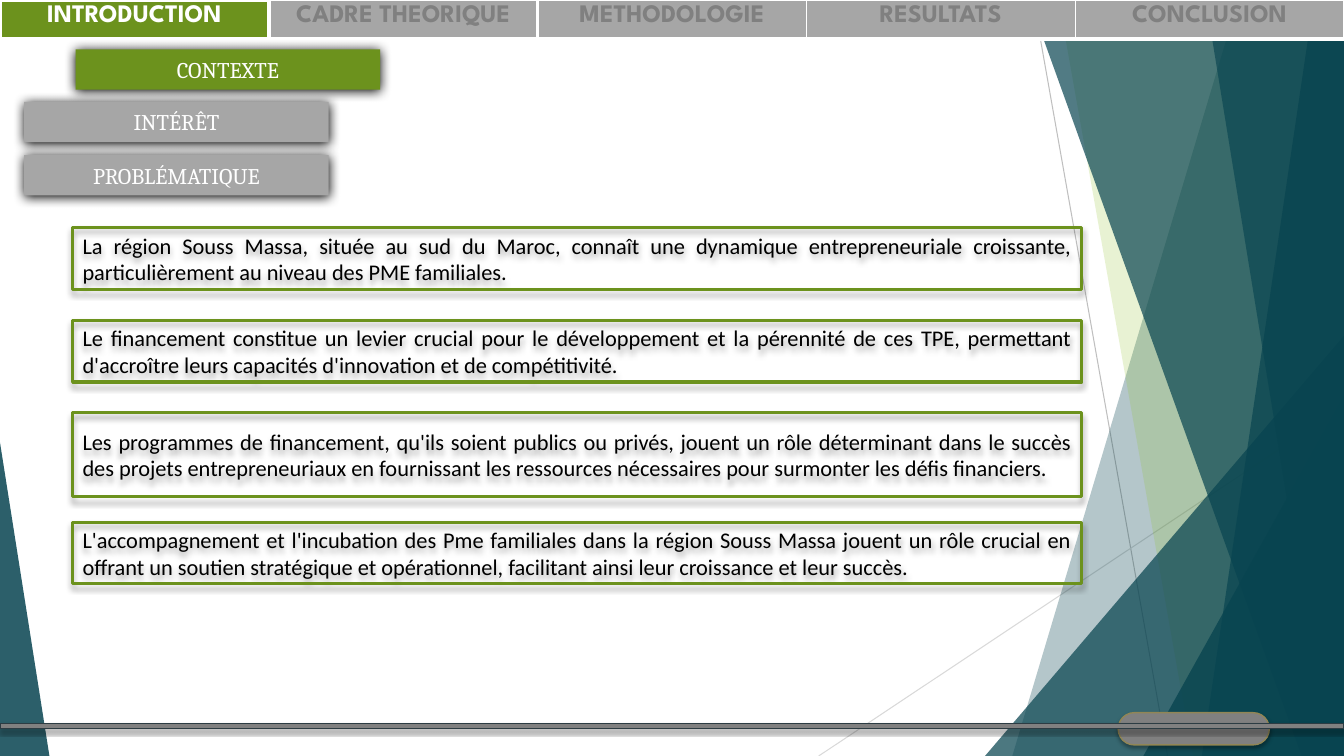
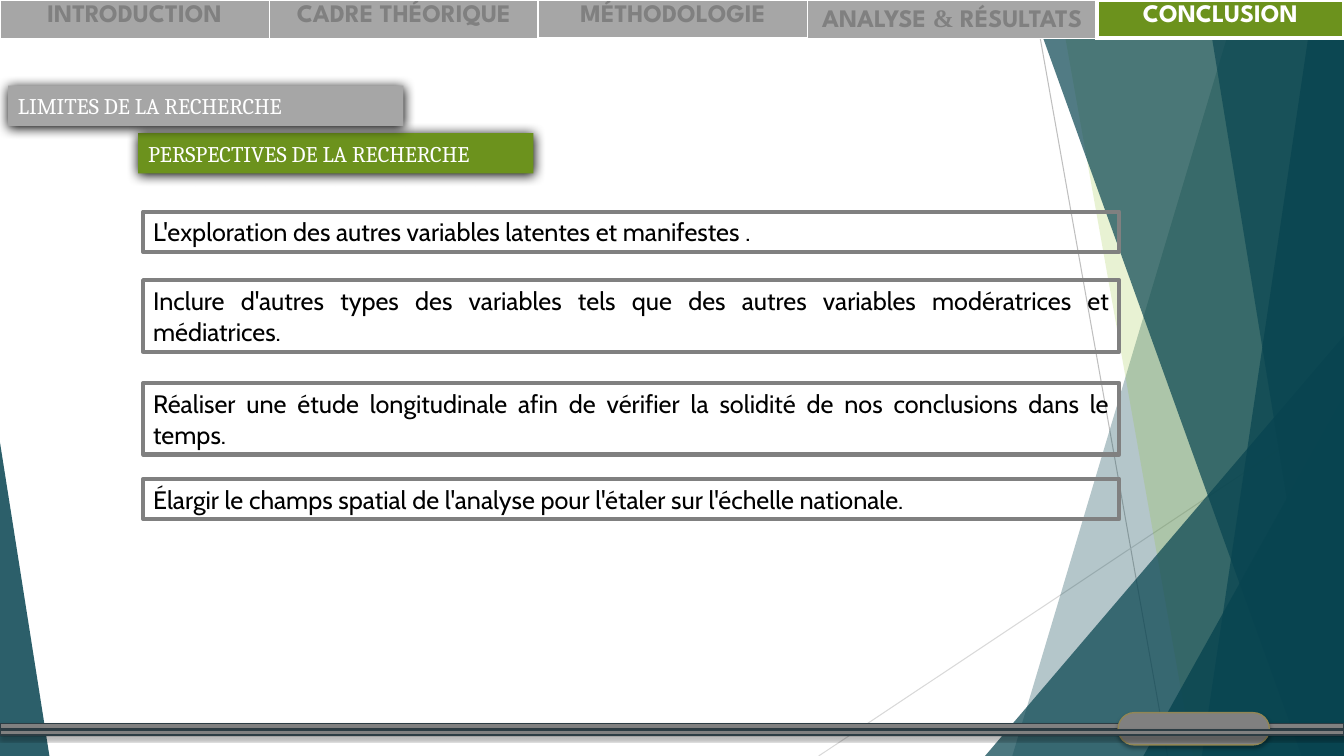
from lxml.etree import SubElement
from pptx import Presentation
from pptx.dml.color import RGBColor
from pptx.enum.shapes import MSO_CONNECTOR, MSO_SHAPE as SHAPE
from pptx.enum.text import MSO_ANCHOR as ANCHOR, PP_ALIGN as ALIGN
from pptx.oxml.ns import qn
from pptx.util import Inches, Pt

W, H = 13.33, 7.5
COLORS = {
    "green": "6C921D", "lime": "90C226", "teal": "084450", "silver": "A6A6A6",
    "gray": "808080", "slate": "2C3C43", "khaki": "918655", "white": "FFFFFF",
    "black": "000000", "hair": "BFBFBF", "pale": "D9D9D9",
}
CHIP_SHADOW = (100, 8.5, 1)
BAR_SHADOW = (35, 3, 2)
BOX_SHADOW = (35, 4, 3)


class Deck:
    """Hold the deck style and the slide being drawn."""

    def __init__(self):
        self.prs = Presentation()
        self.prs.slide_width, self.prs.slide_height = Inches(W), Inches(H)

    def rgb(self, name):
        return RGBColor.from_string(COLORS[name])

    def new_slide(self):
        self.s = self.prs.slides.add_slide(self.prs.slide_layouts[6])
        self.backdrop()

    def paint(self, sp, fill=None, alpha=100, line=None, width=1, shadow=None):
        if fill:
            sp.fill.solid()
            sp.fill.fore_color.rgb = self.rgb(fill)
            if alpha < 100:
                color = sp._element.spPr.find(qn("a:solidFill"))[0]
                SubElement(color, qn("a:alpha"), val=str(alpha * 1000))
        else:
            sp.fill.background()
        if line:
            sp.line.color.rgb = self.rgb(line)
            sp.line.width = Pt(width)
        else:
            sp.line.fill.background()
        sp.shadow.inherit = False
        if shadow:
            opacity, blur, dist = shadow
            effects = sp._element.spPr.find(qn("a:effectLst"))
            outer = SubElement(effects, qn("a:outerShdw"), blurRad=str(Pt(blur)),
                               dist=str(Pt(dist)), dir="5400000", rotWithShape="0")
            color = SubElement(outer, qn("a:srgbClr"), val=COLORS["black"])
            SubElement(color, qn("a:alpha"), val=str(opacity * 1000))

    def shape(self, kind, x, y, w, h, adj=None, **style):
        sp = self.s.shapes.add_shape(kind, Inches(x), Inches(y), Inches(w), Inches(h))
        if adj is not None:
            sp.adjustments[0] = adj
        self.paint(sp, **style)
        return sp

    def triangle(self, x, y, w, adj, alpha):
        self.shape(SHAPE.ISOSCELES_TRIANGLE, x, y, w, H - y, adj, fill="teal", alpha=alpha)

    def wedge(self, top, bottom, alpha, fill="teal"):
        fb = self.s.shapes.build_freeform(Inches(top), 0)
        corners = [(W, 0), (W, H), (bottom, H)]
        fb.add_line_segments([(Inches(x), Inches(y)) for x, y in corners])
        self.paint(fb.convert_to_shape(), fill=fill, alpha=alpha)

    def line(self, x1, y1, x2, y2, color):
        cn = self.s.shapes.add_connector(
            MSO_CONNECTOR.STRAIGHT, Inches(x1), Inches(y1), Inches(x2), Inches(y2))
        cn.line.color.rgb = self.rgb(color)
        cn.line.width = Pt(0.75)
        SubElement(cn._element.spPr, qn("a:effectLst"))

    def backdrop(self):
        self.line(10.25, 0, 11.58, H, "hair")
        self.line(W, 4.03, 8.12, H, "pale")
        self.wedge(12.28, 10.04, 30)
        self.wedge(10.5, 11.83, 20, "lime")
        self.triangle(9.77, 3.33, 3.56, 1, 72)
        self.wedge(10.21, 12.91, 70)
        self.wedge(13.03, 11.92, 70)
        self.wedge(11.96, 13.18, 65)
        self.triangle(11.34, 3.93, 1.99, 1, 80)
        self.triangle(0, 4.39, 0.49, 0, 85)

    def add_text(self, p, text, font, size, color, bold=False):
        r = p.add_run()
        r.text = text
        r.font.name, r.font.size, r.font.bold = font, Pt(size), bold
        r.font.color.rgb = self.rgb(color)

    def label(self, sp, text, font, size, color, align):
        tf = sp.text_frame
        tf.word_wrap = True
        tf.vertical_anchor = ANCHOR.MIDDLE
        p = tf.paragraphs[0]
        p.alignment = align
        self.add_text(p, text, font, size, color)

    def nav(self, labels, active, widths, height, borders):
        frame = self.s.shapes.add_table(
            1, len(labels), 0, 0, Inches(W), Inches(height))
        table = frame.table
        table.rows[0].height = Inches(height)
        for i, (runs, width, edges) in enumerate(zip(labels, widths, borders)):
            table.columns[i].width = Inches(width)
            cell = table.cell(0, i)
            tc_pr = cell._tc.get_or_add_tcPr()
            for side, weight in zip("LRTB", edges):
                ln = SubElement(tc_pr, qn(f"a:ln{side}"), w=str(Pt(weight)))
                solid = SubElement(ln, qn("a:solidFill"))
                SubElement(solid, qn("a:srgbClr"), val=COLORS["white"])
            cell.fill.solid()
            cell.fill.fore_color.rgb = self.rgb("green" if i == active else "silver")
            p = cell.text_frame.paragraphs[0]
            p.alignment = ALIGN.CENTER
            for text in runs:
                font = "Times New Roman" if text == "& " else "League Spartan"
                self.add_text(p, text, font, 18, "white" if i == active else "gray", True)

    def chip(self, text, x, y, w, active=False, align=ALIGN.CENTER):
        sp = self.shape(SHAPE.RECTANGLE, x, y, w, 0.4,
                        fill="green" if active else "silver", shadow=CHIP_SHADOW)
        self.label(sp, text, "Cambria", 16, "white", align)

    def box(self, text, x, y, w, h, font, size, **style):
        sp = self.shape(SHAPE.RECTANGLE, x, y, w, h, **style)
        self.label(sp, text, font, size, "black", ALIGN.JUSTIFY)

    def bar(self, y):
        self.shape(SHAPE.RECTANGLE, 0, y, W, 0.05, fill="gray", line="slate",
                   shadow=BAR_SHADOW)

    def pill(self):
        self.shape(SHAPE.ROUNDED_RECTANGLE, 11.09, 7.07, 1.5, 0.32, 0.5,
                   fill="gray", line="khaki", shadow=BAR_SHADOW)


def context_slide(deck):
    deck.new_slide()
    deck.nav([["INTRODUCTION"], ["CADRE THEORIQUE"], ["METHODOLOGIE"],
              ["RESULTATS"], ["CONCLUSION"]], 0, [W / 5] * 5, 0.39,
             [(3, 3, 3, 3), (3, 3, 1, 3), (3, 1, 1, 3), (1, 1, 1, 3), (1, 1, 1, 3)])
    deck.chip("CONTEXTE", 0.75, 0.49, 3.02, active=True)
    deck.chip("INTÉRÊT", 0.24, 1.01, 3.02)
    deck.chip("PROBLÉMATIQUE", 0.24, 1.54, 3.02)
    deck.pill()
    deck.bar(7.18)
    points = [
        (2.26, 0.61, "La région Souss Massa, située au sud du Maroc, connaît une dynamique "
         "entrepreneuriale croissante, particulièrement au niveau des PME familiales."),
        (3.18, 0.61, "Le financement constitue un levier crucial pour le développement et la "
         "pérennité de ces TPE, permettant d'accroître leurs capacités d'innovation et de "
         "compétitivité."),
        (4.09, 0.84, "Les programmes de financement, qu'ils soient publics ou privés, jouent "
         "un rôle déterminant dans le succès des projets entrepreneuriaux en fournissant les "
         "ressources nécessaires pour surmonter les défis financiers."),
        (5.18, 0.61, "L'accompagnement et l'incubation des Pme familiales dans la région Souss "
         "Massa jouent un rôle crucial en offrant un soutien stratégique et opérationnel, "
         "facilitant ainsi leur croissance et leur succès."),
    ]
    for y, h, text in points:
        deck.box(text, 0.72, y, 10.01, h, "Calibri", 16,
                 line="green", width=2.25, shadow=BOX_SHADOW)


def outlook_slide(deck):
    deck.new_slide()
    deck.nav([["INTRODUCTION"], ["CADRE THÉORIQUE"], ["MÉTHODOLOGIE"],
              ["ANALYSE ", "& ", "RÉSULTATS"], ["CONCLUSION"]], 4,
             [2.67, 2.67, 2.67, 2.87, 2.45], 0.38,
             [(1, 1, 1, 1), (1, 1.5, 1, 1), (1.5, 1, 1.5, 1.5), (1, 3, 1, 1), (3, 3, 3, 3)])
    deck.chip("PERSPECTIVES DE LA RECHERCHE", 1.37, 1.32, 3.92, True, ALIGN.LEFT)
    deck.chip("LIMITES DE LA RECHERCHE", 0.08, 0.85, 3.92, align=ALIGN.LEFT)
    points = [
        (2.1, 0.4, "L'exploration des autres variables latentes et manifestes ."),
        (2.78, 0.71, "Inclure d'autres types des variables tels que des autres variables "
         "modératrices et médiatrices."),
        (3.8, 0.71, "Réaliser une étude longitudinale afin de vérifier la solidité de nos "
         "conclusions dans le temps."),
        (4.75, 0.4, "Élargir le champs spatial de l'analyse pour l'étaler sur l'échelle "
         "nationale."),
    ]
    for y, h, text in points:
        deck.box(text, 1.42, y, 9.68, h, "Cabin", 18, line="gray", width=3)
    deck.bar(7.18)
    deck.pill()
    deck.bar(7.24)


def main():
    deck = Deck()
    context_slide(deck)
    outlook_slide(deck)
    deck.prs.save("out.pptx")


if __name__ == "__main__":
    main()
